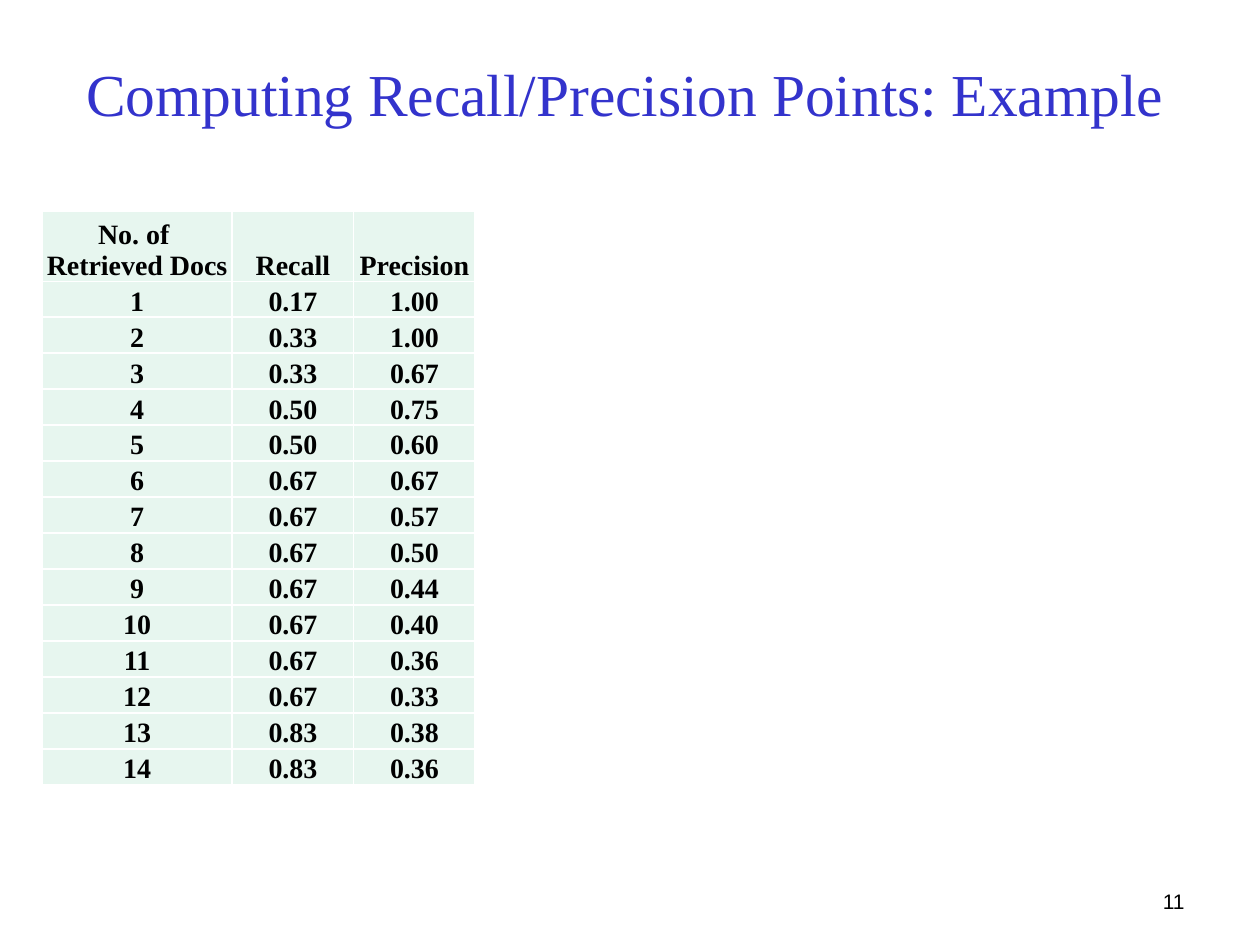
from dataclasses import dataclass

from lxml.etree import SubElement
from pptx import Presentation
from pptx.dml.color import RGBColor
from pptx.enum.text import MSO_ANCHOR as Anchor, PP_ALIGN as Align
from pptx.oxml.ns import qn
from pptx.util import Cm, Pt

RELEVANT_RANKS = {1, 2, 4, 6, 13}
RELEVANT_TOTAL = 6
RETRIEVED_TOTAL = 14
HEADERS = ["No. of \nRetrieved Docs", "Recall", "Precision"]
COLUMN_WIDTHS = [3.83, 2.45, 2.45]
TABLE_LEFT, TABLE_TOP, TABLE_HEIGHT = 0.85, 4.25, 11.58
HEADER_HEIGHT = 1.42
CELL_FORMAT = {
    "vertical_anchor": Anchor.BOTTOM,
    "margin_left": Cm(0.03),
    "margin_top": Cm(0.03),
    "margin_right": Cm(0.03),
    "margin_bottom": Cm(0),
}


@dataclass
class TextStyle:
    font: str
    size: float
    color: str
    align: Align
    bold: bool = False


@dataclass
class Label:
    text: str
    left: float
    top: float
    width: float
    height: float
    anchor: Anchor
    style: TextStyle


TITLE_STYLE = TextStyle("Times New Roman", 34, "3333CC", Align.CENTER)
NUMBER_STYLE = TextStyle("Arial", 12, "000000", Align.RIGHT)
CELL_STYLE = TextStyle("Times New Roman", 16, "000000", Align.CENTER, True)
LABELS = [
    Label("11", 18.85, 17.78, 5.28, 0.64, Anchor.TOP, NUMBER_STYLE),
    Label("Computing Recall/Precision Points: Example",
          0.64, 0.81, 23.93, 2.11, Anchor.MIDDLE, TITLE_STYLE),
]


def rgb(color: str) -> RGBColor:
    return RGBColor.from_string(color)


def apply_format(target, values: dict) -> None:
    for name, value in values.items():
        setattr(target, name, value)


def write_text(text_frame, text: str, style: TextStyle) -> None:
    text_frame.text = text
    for paragraph in text_frame.paragraphs:
        paragraph.alignment = style.align
        for run in paragraph.runs:
            apply_format(run.font, {"name": style.font, "size": Pt(style.size), "bold": style.bold})
            run.font.color.rgb = rgb(style.color)


def draw_label(slide, label: Label) -> None:
    shape = slide.shapes.add_textbox(
        Cm(label.left), Cm(label.top), Cm(label.width), Cm(label.height))
    apply_format(shape.text_frame, {"word_wrap": True, "vertical_anchor": label.anchor})
    write_text(shape.text_frame, label.text, label.style)


def add_borders(cell, color: str, width: float) -> None:
    properties = cell._tc.get_or_add_tcPr()
    for position, side in enumerate(("lnL", "lnR", "lnT", "lnB")):
        line = SubElement(properties, qn(f"a:{side}"), w=str(Pt(width)))
        fill = SubElement(line, qn("a:solidFill"))
        SubElement(fill, qn("a:srgbClr"), val=color)
        properties.insert(position, line)


def recall_precision_rows() -> list[list[str]]:
    rows = []
    for retrieved in range(1, RETRIEVED_TOTAL + 1):
        hits = sum(rank <= retrieved for rank in RELEVANT_RANKS)
        rows.append([str(retrieved), f"{hits / RELEVANT_TOTAL:.2f}", f"{hits / retrieved:.2f}"])
    return rows


def draw_table(slide, rows: list[list[str]]) -> None:
    table = slide.shapes.add_table(
        len(rows), len(COLUMN_WIDTHS), Cm(TABLE_LEFT), Cm(TABLE_TOP),
        Cm(sum(COLUMN_WIDTHS)), Cm(TABLE_HEIGHT)).table
    apply_format(table, {"first_row": False, "horz_banding": False})
    for column, width in zip(table.columns, COLUMN_WIDTHS):
        column.width = Cm(width)
    body_height = (TABLE_HEIGHT - HEADER_HEIGHT) / (len(rows) - 1)
    for index, (row, texts) in enumerate(zip(table.rows, rows)):
        row.height = Cm(body_height if index else HEADER_HEIGHT)
        for cell, text in zip(row.cells, texts):
            apply_format(cell, CELL_FORMAT)
            cell.fill.solid()
            cell.fill.fore_color.rgb = rgb("E7F6EF")
            add_borders(cell, "FFFFFF", 1)
            write_text(cell.text_frame, text, CELL_STYLE)


def main() -> None:
    presentation = Presentation()
    apply_format(presentation, {"slide_width": Cm(25.4), "slide_height": Cm(19.05)})
    slide = presentation.slides.add_slide(presentation.slide_layouts[6])
    for label in LABELS:
        draw_label(slide, label)
    draw_table(slide, [HEADERS, *recall_precision_rows()])
    presentation.save("out.pptx")


if __name__ == "__main__":
    main()
